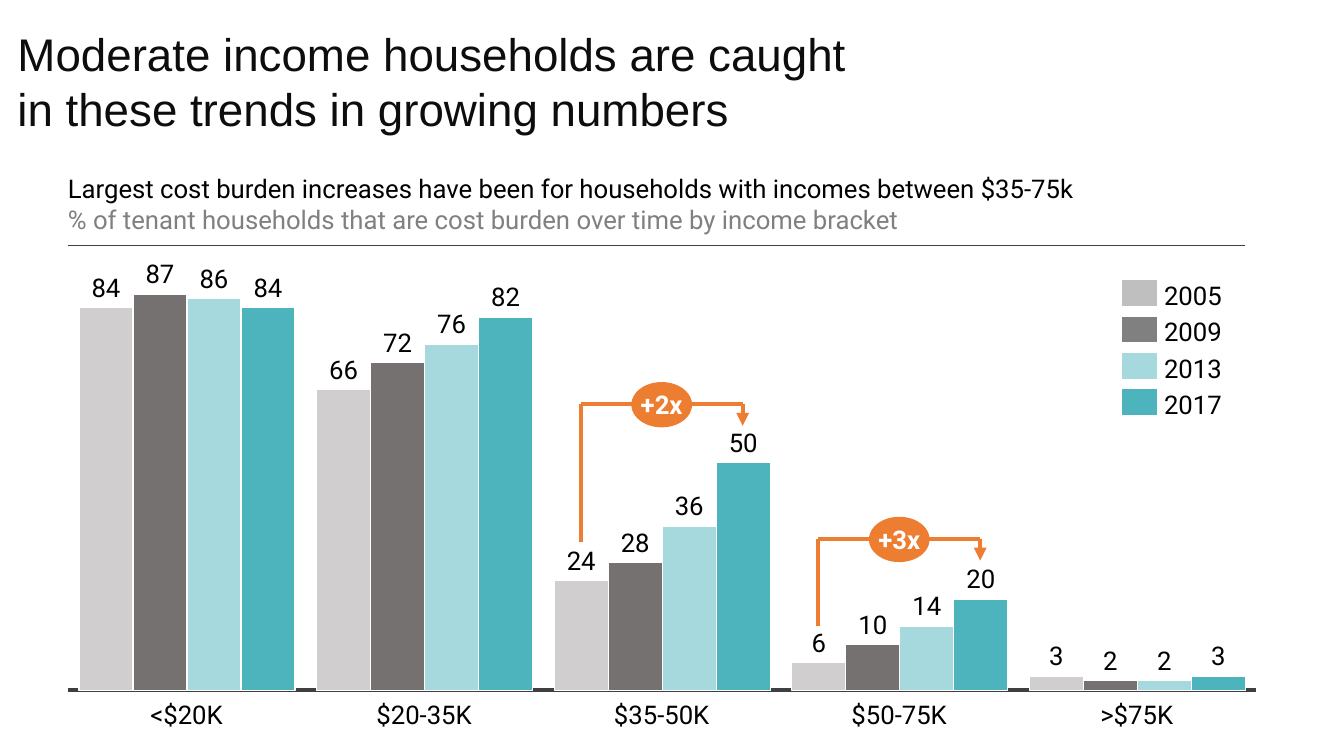
"""Build a slide on tenant cost burden by income bracket."""
from lxml.etree import SubElement
from pptx import Presentation
from pptx.chart.data import CategoryChartData
from pptx.dml.color import RGBColor
from pptx.enum.chart import XL_CHART_TYPE, XL_LABEL_POSITION, XL_TICK_LABEL_POSITION, XL_TICK_MARK
from pptx.enum.shapes import MSO_CONNECTOR, MSO_SHAPE
from pptx.enum.text import MSO_ANCHOR, PP_ALIGN
from pptx.oxml import parse_xml
from pptx.oxml.ns import nsdecls, qn
from pptx.util import Inches, Pt

BLACK = RGBColor(0, 0, 0)
INK = RGBColor(0x0D, 0x0D, 0x0D)
WHITE = RGBColor(0xFF, 0xFF, 0xFF)
GREY = RGBColor(0x80, 0x80, 0x80)
DARK = RGBColor(0x3F, 0x3E, 0x40)
ORANGE = RGBColor(0xED, 0x7D, 0x31)
SILVER = RGBColor(0xBF, 0xBF, 0xBF)
PALE = RGBColor(0xD0, 0xCE, 0xCE)
STONE = RGBColor(0x76, 0x71, 0x71)
AQUA = RGBColor(0xA6, 0xD9, 0xDE)
TEAL = RGBColor(0x4D, 0xB4, 0xBE)

TITLE = "Moderate income households are caught in these trends in growing numbers"
HEAD = "Largest cost burden increases have been for households with incomes between $35-75k"
NOTE = "% of tenant households that are cost burden over time by income bracket"
BANDS = ["<$20K", "$20-35K", "$35-50K", "$50-75K", ">$75K"]
YEARS = [
    ("2005", PALE, SILVER, (84, 66, 24, 6, 3)),
    ("2009", STONE, GREY, (87, 72, 28, 10, 2)),
    ("2013", AQUA, AQUA, (86, 76, 36, 14, 2)),
    ("2017", TEAL, TEAL, (84, 82, 50, 20, 3)),
]
JUMPS = [(2, "+2x", 3.93, 5.27), (3, "+3x", 5.24, 6.09)]

LEFT, STEP, GAP = 0.66, 2.31, 40
BAR = STEP / (len(YEARS) + GAP / 100)
CHART = (0.57, 2.51, 11.73, 4.29)
PLOT = {"x": 0.008, "y": 0.082, "w": 0.985, "h": 0.897}
KEY_TOP, KEY_END = 2.72, 3.78


def write(frame, text, size=18, font="Roboto", color=BLACK, bold=False,
          align=PP_ALIGN.LEFT, anchor=MSO_ANCHOR.TOP, wrap=False, more=False):
    frame.margin_left = frame.margin_right = frame.margin_top = frame.margin_bottom = 0
    frame.word_wrap = wrap
    frame.vertical_anchor = anchor
    para = frame.add_paragraph() if more else frame.paragraphs[0]
    para.alignment = align
    run = para.add_run()
    run.text = text
    run.font.size, run.font.name, run.font.bold = Pt(size), font, bold
    run.font.color.rgb = color


def box(x, y, w, h):
    return slide.shapes.add_textbox(Inches(x), Inches(y), Inches(w), Inches(h)).text_frame


def shape(kind, x, y, w, h, fill, edge):
    item = slide.shapes.add_shape(kind, Inches(x), Inches(y), Inches(w), Inches(h))
    item.shadow.inherit = False
    item.fill.solid()
    item.fill.fore_color.rgb = fill
    item.line.color.rgb = edge
    item.line.width = Pt(0.75)
    return item.text_frame


def line(x1, y1, x2, y2, color=ORANGE, width=3, arrow=False):
    item = slide.shapes.add_connector(
        MSO_CONNECTOR.STRAIGHT, Inches(x1), Inches(y1), Inches(x2), Inches(y2))
    item.line.color.rgb = color
    item.line.width = Pt(width)
    if arrow:
        SubElement(item.line._get_or_add_ln(), qn("a:tailEnd"), type="triangle")
    SubElement(item._element.spPr, qn("a:effectLst"))


def draw_chart():
    data = CategoryChartData()
    data.categories = BANDS
    for year, _, _, values in YEARS:
        data.add_series(year, values)
    chart = slide.shapes.add_chart(
        XL_CHART_TYPE.COLUMN_CLUSTERED, *map(Inches, CHART), data).chart
    chart.has_legend = chart.has_title = False
    chart.font.size, chart.font.name = Pt(18), "Roboto"
    chart.font.color.rgb = BLACK

    axis = chart.category_axis
    axis.tick_label_position = XL_TICK_LABEL_POSITION.NONE
    axis.major_tick_mark = axis.minor_tick_mark = XL_TICK_MARK.NONE
    axis.format.line.color.rgb = DARK
    axis.format.line.width = Pt(2.25)
    scale = chart.value_axis
    scale.minimum_scale, scale.maximum_scale = 0, 87
    scale.has_major_gridlines = scale.visible = False

    plot = chart.plots[0]
    plot.gap_width, plot.overlap, plot.vary_by_categories = GAP, 0, False
    plot.has_data_labels = True
    plot.data_labels.show_value = True
    plot.data_labels.position = XL_LABEL_POSITION.OUTSIDE_END
    for series, (_, color, _, _) in zip(plot.series, YEARS):
        series.format.fill.solid()
        series.format.fill.fore_color.rgb = color
        series.format.line.color.rgb = WHITE
        series.format.line.width = Pt(0.75)

    area = chart._chartSpace.chart.plotArea
    for old in area.findall(qn("c:layout")):
        area.remove(old)
    modes = '<c:layoutTarget val="inner"/><c:xMode val="edge"/><c:yMode val="edge"/>'
    sizes = "".join(f'<c:{key} val="{val}"/>' for key, val in PLOT.items())
    area.insert(0, parse_xml(
        f'<c:layout {nsdecls("c")}><c:manualLayout>{modes}{sizes}</c:manualLayout></c:layout>'))


deck = Presentation()
deck.slide_width, deck.slide_height = Inches(13.07), Inches(7.35)
slide = deck.slides.add_slide(deck.slide_layouts[6])

write(box(0.17, 0.25, 8.1, 1.08), TITLE, size=32, font="Arial", color=INK, wrap=True)
intro = box(LEFT, 1.68, 11.45, 0.63)
write(intro, HEAD, wrap=True)
write(intro, NOTE, color=GREY, wrap=True, more=True)
line(LEFT, 2.39, 12.11, 2.39, color=DARK, width=0.75)
draw_chart()

for i, band in enumerate(BANDS):
    mid = LEFT + STEP * (i + 0.5)
    write(box(mid - 0.48, 6.79, 0.96, 0.3), band, align=PP_ALIGN.CENTER)

for i, text, top, foot in JUMPS:
    mid = LEFT + STEP * (i + 0.5)
    start, end = mid - 1.5 * BAR, mid + 1.5 * BAR
    line(start, foot, start, top)
    line(end, top, end, top + 0.21, arrow=True)
    line(start, top, end, top)
    badge = shape(MSO_SHAPE.OVAL, mid - 0.29, top - 0.21, 0.58, 0.43, ORANGE, ORANGE)
    write(badge, text, color=WHITE, bold=True, align=PP_ALIGN.CENTER, anchor=MSO_ANCHOR.MIDDLE)

pitch = (KEY_END - KEY_TOP) / (len(YEARS) - 1)
for i, (year, _, color, _) in enumerate(YEARS):
    top = KEY_TOP + i * pitch
    shape(MSO_SHAPE.RECTANGLE, 10.91, top, 0.35, 0.26, color, WHITE)
    write(box(11.32, top, 0.65, 0.3), year, anchor=MSO_ANCHOR.MIDDLE, wrap=True)

deck.save("out.pptx")
